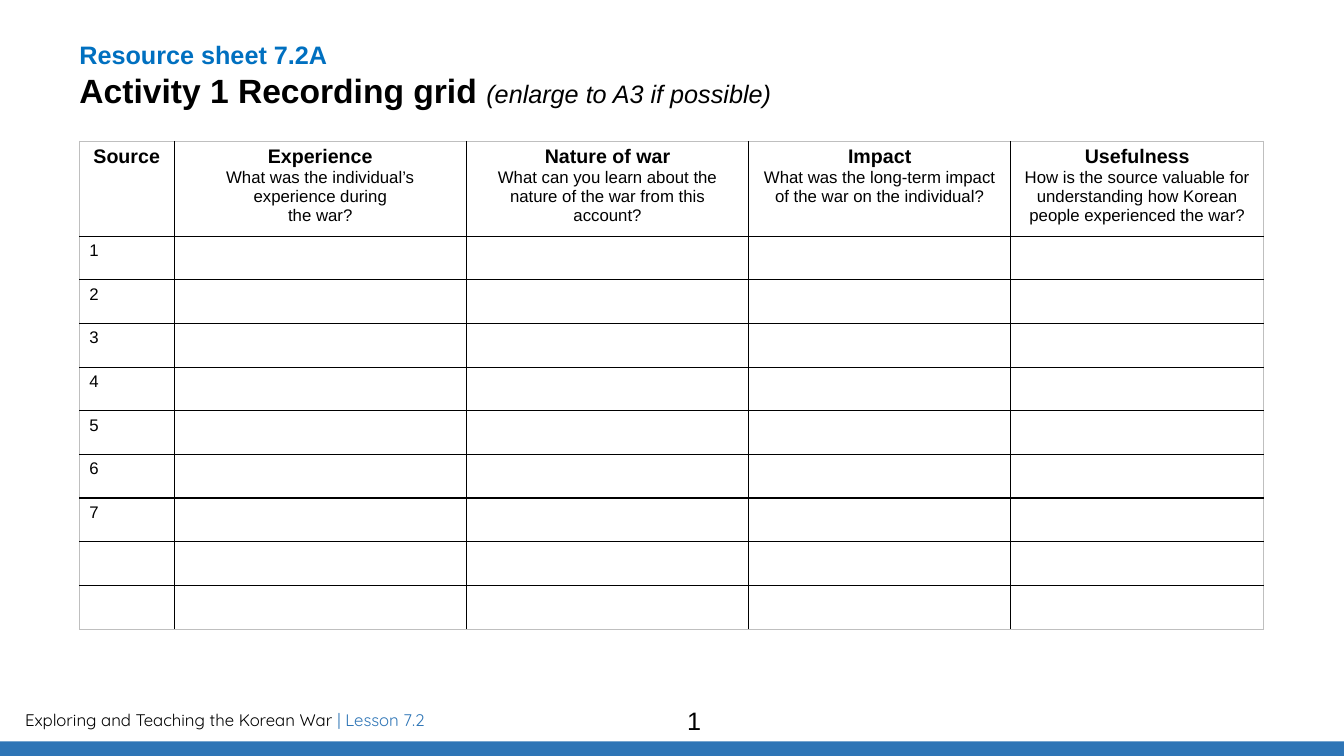
from dataclasses import dataclass

from lxml.etree import SubElement
from pptx import Presentation
from pptx.dml.color import RGBColor
from pptx.enum.shapes import MSO_SHAPE
from pptx.enum.text import MSO_ANCHOR, MSO_AUTO_SIZE, PP_ALIGN
from pptx.oxml.ns import qn
from pptx.util import Pt


@dataclass(frozen=True)
class Theme:
    black: str = "000000"
    white: str = "FFFFFF"
    outline: str = "BFBFBF"
    heading_blue: str = "0070C0"
    footer_blue: str = "2E75B6"
    body_font: str = "Arial"
    footer_font: str = "Quicksand"
    title_size: int = 24
    label_size: int = 18
    header_size: int = 14
    small_size: int = 12


THEME = Theme()
SLIDE_WIDTH, SLIDE_HEIGHT = 960, 540
COLUMN_WIDTHS = [67.7, 208.8, 201.6, 187.2, 180.7]
HEADER_HEIGHT, ROW_HEIGHT, ROW_COUNT = 67.9, 31.2, 9
NUMBERED_SOURCES = 7
HEADERS = [
    ("Source", ""),
    ("Experience", "What was the individual’s experience during\vthe war?"),
    ("Nature of war", "What can you learn about the nature of the war from this account?"),
    ("Impact", "What was the long-term impact of the war on the individual?"),
    ("Usefulness", "How is the source valuable for understanding how Korean people experienced the war?"),
]


def format_font(font, size, color=THEME.black, name=THEME.body_font, bold=False, italic=False):
    font.name, font.size = name, Pt(size)
    font.bold, font.italic = bold, italic
    font.color.rgb = RGBColor.from_string(color)


def add_run(paragraph, text, size, **style):
    run = paragraph.add_run()
    run.text = text
    format_font(run.font, size, **style)


def add_text_box(slide, left, top, width, height):
    frame = slide.shapes.add_textbox(Pt(left), Pt(top), Pt(width), Pt(height)).text_frame
    frame.word_wrap = True
    return frame.paragraphs[0]


def add_footer(slide, left, top, width, height):
    bar_height = 10.5
    bar = slide.shapes.add_shape(
        MSO_SHAPE.RECTANGLE, Pt(left), Pt(top + height - bar_height), Pt(width), Pt(bar_height))
    bar.shadow.inherit = False
    bar.fill.solid()
    bar.fill.fore_color.rgb = RGBColor.from_string(THEME.footer_blue)
    bar.line.fill.background()

    course = add_text_box(slide, left + 10.8, top + 3, 563, 21.6)
    add_run(course, "Exploring and Teaching the Korean War ", THEME.small_size, name=THEME.footer_font)
    add_run(course, "| Lesson 7.2", THEME.small_size, name=THEME.footer_font, color=THEME.footer_blue)

    page_number = add_text_box(slide, left + 314, top, 363.6, 29)
    page_number.text = "1"
    page_number.alignment = PP_ALIGN.CENTER
    format_font(page_number.font, THEME.label_size)


def fill_title(slide, left, top, width, height):
    title = slide.shapes.title
    title.left, title.top, title.width, title.height = Pt(left), Pt(top), Pt(width), Pt(height)
    frame = title.text_frame
    frame.margin_left = frame.margin_top = frame.margin_right = frame.margin_bottom = 0
    frame.vertical_anchor = MSO_ANCHOR.TOP
    frame.auto_size = MSO_AUTO_SIZE.NONE
    frame.word_wrap = True
    paragraph = frame.paragraphs[0]
    paragraph.alignment = PP_ALIGN.LEFT
    add_run(paragraph, "Resource sheet 7.2A", THEME.label_size, color=THEME.heading_blue, bold=True)
    paragraph.add_line_break()
    add_run(paragraph, "Activity 1 Recording grid ", THEME.title_size, bold=True)
    add_run(paragraph, "(enlarge to A3 if possible)", THEME.label_size, italic=True)


def set_borders(cell, outer_sides):
    """Rule the cell in black, with a thin grey line on its outer sides."""
    properties = cell._tc.get_or_add_tcPr()
    for side in "LRTB":
        outer = side in outer_sides
        line = SubElement(properties, qn(f"a:ln{side}"), w=str(Pt(0.5 if outer else 1)))
        fill = SubElement(line, qn("a:solidFill"))
        SubElement(fill, qn("a:srgbClr"), val=THEME.outline if outer else THEME.black)


def fill_header(cell, heading, question):
    frame = cell.text_frame
    parts = [(heading, THEME.header_size, True)]
    if question:
        parts.append((question, THEME.small_size, False))
        frame.add_paragraph()
    for paragraph, (text, size, bold) in zip(frame.paragraphs, parts):
        paragraph.text = text
        paragraph.alignment = PP_ALIGN.CENTER
        format_font(paragraph.font, size, bold=bold)


def add_recording_grid(slide, left, top):
    last_row, last_column = ROW_COUNT, len(COLUMN_WIDTHS) - 1
    height = HEADER_HEIGHT + ROW_COUNT * ROW_HEIGHT
    table = slide.shapes.add_table(
        ROW_COUNT + 1, len(COLUMN_WIDTHS),
        Pt(left), Pt(top), Pt(sum(COLUMN_WIDTHS)), Pt(height)).table
    table.first_row = table.horz_banding = False
    for column, width in zip(table.columns, COLUMN_WIDTHS):
        column.width = Pt(width)
    for row_index, row in enumerate(table.rows):
        row.height = Pt(ROW_HEIGHT if row_index else HEADER_HEIGHT)
        for column_index, cell in enumerate(row.cells):
            edges = {"L": column_index == 0, "R": column_index == last_column,
                     "T": row_index == 0, "B": row_index == last_row}
            set_borders(cell, [side for side, outer in edges.items() if outer])
            cell.fill.solid()
            cell.fill.fore_color.rgb = RGBColor.from_string(THEME.white)
            if row_index == 0:
                fill_header(cell, *HEADERS[column_index])
                continue
            paragraph = cell.text_frame.paragraphs[0]
            if column_index == 0 and row_index <= NUMBERED_SOURCES:
                paragraph.text = str(row_index)
            format_font(paragraph.font, THEME.small_size)


def main():
    presentation = Presentation()
    presentation.slide_width, presentation.slide_height = Pt(SLIDE_WIDTH), Pt(SLIDE_HEIGHT)
    slide = presentation.slides.add_slide(presentation.slide_layouts.get_by_name("Title Only"))
    add_footer(slide, 0, 500.4, SLIDE_WIDTH, SLIDE_HEIGHT - 500.4)
    fill_title(slide, 56.7, 28.3, 787.7, 72.5)
    add_recording_grid(slide, 56.7, 100.8)
    presentation.save("out.pptx")


if __name__ == "__main__":
    main()
